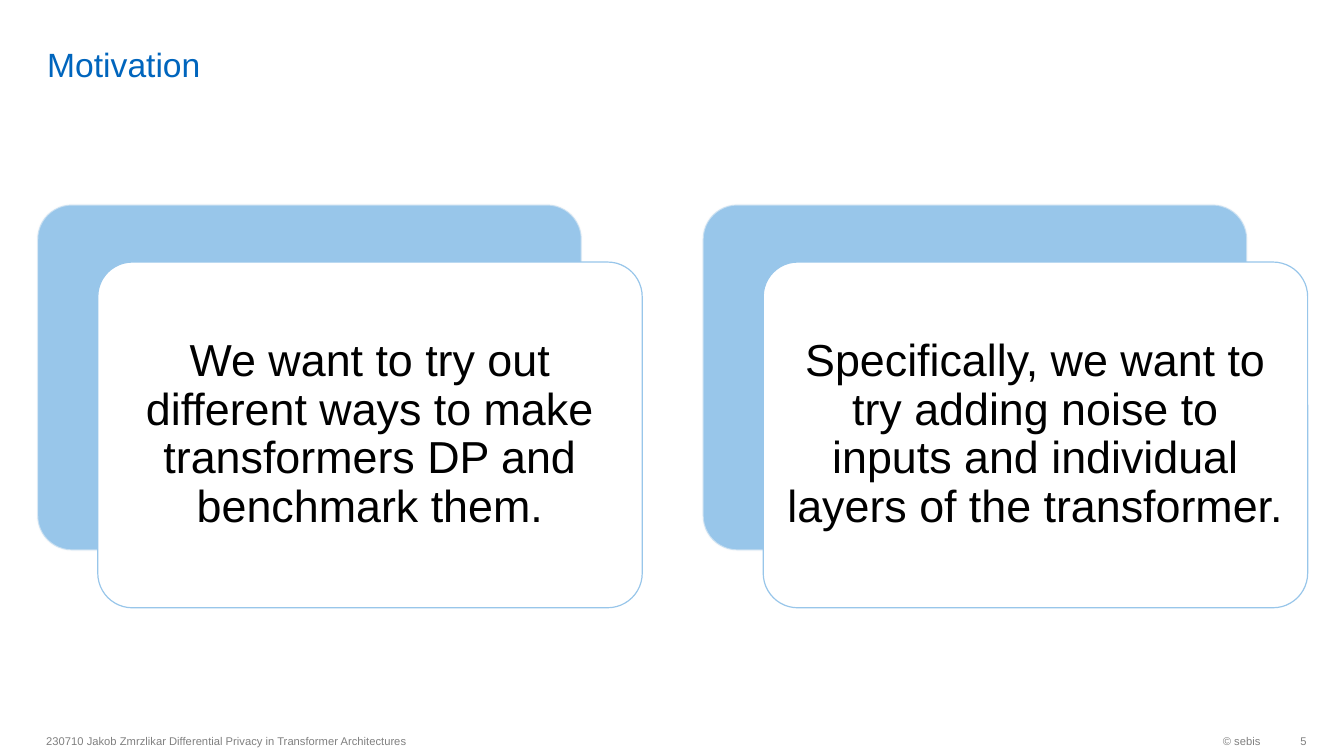
import dataclasses

import lxml.etree
import pptx
import pptx.dml.color
import pptx.enum.shapes
import pptx.enum.text
import pptx.oxml.ns
import pptx.util

Inches = pptx.util.Inches
Pt = pptx.util.Pt
Align = pptx.enum.text.PP_ALIGN
Anchor = pptx.enum.text.MSO_ANCHOR


@dataclasses.dataclass(frozen=True)
class Theme:
    font: str = "Arial"
    title_color: str = "0065BD"
    footer_color: str = "808080"
    text_color: str = "000000"
    accent: str = "98C6EA"
    card: str = "FFFFFF"
    back_edge: str = "F9F9F9"
    title_size: int = 24
    footer_size: int = 8
    card_size: int = 32


THEME = Theme()

STATEMENTS = [
    "We want to try out different ways to make transformers DP and benchmark them.",
    "Specifically, we want to try adding noise to inputs and individual layers "
    "of the transformer.",
]


def rgb(value):
    return pptx.dml.color.RGBColor.from_string(value)


def write_text(box, text, size, color, align, anchor, insets):
    """Fill a shape with one paragraph; insets are left, top, right, bottom."""
    frame = box.text_frame
    frame.word_wrap = True
    frame.vertical_anchor = anchor
    (frame.margin_left, frame.margin_top,
     frame.margin_right, frame.margin_bottom) = map(Inches, insets)
    para = frame.paragraphs[0]
    para.text = text
    para.alignment = align
    para.font.name = THEME.font
    para.font.size = Pt(size)
    para.font.color.rgb = rgb(color)
    return para


def add_title(page, text, left, top, width, height):
    box = page.shapes.add_textbox(*map(Inches, (left, top, width, height)))
    write_text(box, text, THEME.title_size, THEME.title_color,
               Align.LEFT, Anchor.BOTTOM, (0.1, 0, 0.1, 0))


def add_footer(page, topic, owner, number, left, top, width, height):
    """Topic on the left; owner and page number at the right edge."""
    number_width, owner_width = 0.36, 2.34
    number_left = left + width - number_width
    parts = [
        (topic, left, 6.3, Align.LEFT, 0.1),
        (owner, number_left - owner_width, owner_width, Align.RIGHT, 0.1),
        (number, number_left, number_width, Align.RIGHT, 0),
    ]
    for text, part_left, part_width, align, right_inset in parts:
        box = page.shapes.add_textbox(
            *map(Inches, (part_left, top, part_width, height)))
        write_text(box, text, THEME.footer_size, THEME.footer_color,
                   align, Anchor.MIDDLE, (0.1, 0.05, right_inset, 0.05))


def add_panel(page, left, top, width, height, fill, edge, edge_width):
    panel = page.shapes.add_shape(
        pptx.enum.shapes.MSO_SHAPE.ROUNDED_RECTANGLE,
        *map(Inches, (left, top, width, height)))
    panel.adjustments[0] = 0.1
    panel.shadow.inherit = False
    panel.fill.solid()
    panel.fill.fore_color.rgb = rgb(fill)
    panel.line.color.rgb = rgb(edge)
    panel.line.width = Pt(edge_width)
    return panel


def add_layered_card(page, text, left, top, width, height):
    """A white text card shifted down and right over a blue panel."""
    shift_x, shift_y = 0.6, 0.57
    size = (width - shift_x, height - shift_y)

    # Blue panel with a half-transparent edge
    back = add_panel(page, left, top, *size, THEME.accent, THEME.back_edge, 1.35)
    edge_color = back.line.fill._xPr.find(".//" + pptx.oxml.ns.qn("a:srgbClr"))
    lxml.etree.SubElement(
        edge_color, pptx.oxml.ns.qn("a:alpha")).set("val", "50000")

    # White card with the statement
    card = add_panel(page, left + shift_x, top + shift_y, *size,
                     THEME.card, THEME.accent, 0.85)
    para = write_text(card, text, THEME.card_size, THEME.text_color,
                      Align.CENTER, Anchor.MIDDLE, (0.13,) * 4)
    para.line_spacing = 0.9


def add_card_row(page, statements, left, top, width, height):
    gap = 0.6
    card_width = (width - gap * (len(statements) - 1)) / len(statements)
    for index, text in enumerate(statements):
        add_layered_card(page, text, left + index * (card_width + gap), top,
                         card_width, height)


def main():
    deck = pptx.Presentation()
    deck.slide_width, deck.slide_height = Inches(13.33), Inches(7.5)
    page = deck.slides.add_slide(deck.slide_layouts[6])

    add_title(page, "Motivation", 0.37, 0.05, 11.58, 0.79)
    add_card_row(page, STATEMENTS, 0.37, 2.03, 12.6, 4)
    add_footer(
        page,
        "230710 Jakob Zmrzlikar Differential Privacy in Transformer Architectures",
        "© sebis", "5", 0.36, 7.19, 12.6, 0.32)

    deck.save("out.pptx")


if __name__ == "__main__":
    main()
